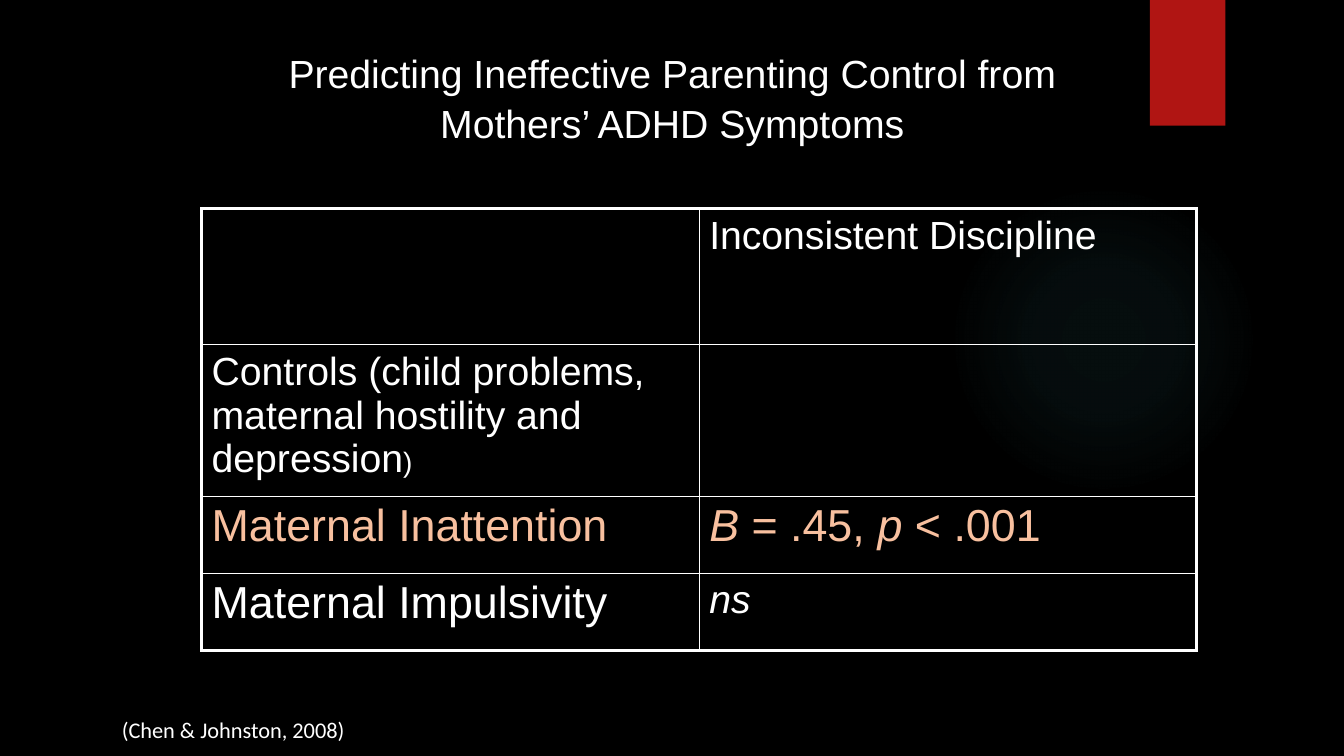
from lxml import etree
from pptx import Presentation
from pptx import util as u
from pptx.dml.color import RGBColor
from pptx.enum import shapes, text
from pptx.oxml.ns import nsdecls

WHITE, PEACH, RED, BLACK, TEAL = "FFFFFF", "F8C09F", "B01513", "000000", "50B9C1"


def color(hex_value):
    return RGBColor.from_string(hex_value)


def add_run(paragraph, words, **font_format):
    """Append a run; font_format holds font attributes and an optional hex fill."""
    run = paragraph.add_run()
    run.text = words
    run.font.color.rgb = color(font_format.pop("fill", WHITE))
    for name, value in font_format.items():
        setattr(run.font, name, value)


deck = Presentation()
deck.slide_width, deck.slide_height = u.Cm(33.87), u.Cm(19.05)
slide = deck.slides.add_slide(deck.slide_layouts[6])
slide.background.fill.solid()
slide.background.fill.fore_color.rgb = color(BLACK)

# Faint glow and red tab
glow = slide.shapes.add_shape(
    shapes.MSO_SHAPE.OVAL, u.Cm(23.9), u.Cm(4.65), u.Cm(7.82), u.Cm(7.82))
stops = "".join(
    f'<a:gs pos="{position * 1000}"><a:srgbClr val="{TEAL}">'
    f'<a:alpha val="{alpha * 1000}"/></a:srgbClr></a:gs>'
    for position, alpha in [(0, 7), (36, 6), (69, 0)])
glow_fill = etree.fromstring(
    f'<a:gradFill {nsdecls("a")} rotWithShape="1"><a:gsLst>{stops}</a:gsLst>'
    '<a:path path="circle"><a:fillToRect l="50000" t="50000" r="50000" b="50000"/>'
    '</a:path></a:gradFill>')
glow._element.spPr.insert(2, glow_fill)

tab = slide.shapes.add_shape(
    shapes.MSO_SHAPE.RECTANGLE, u.Cm(28.98), 0, u.Cm(1.9), u.Cm(3.17))
tab.fill.solid()
tab.fill.fore_color.rgb = color(RED)
for decoration in (glow, tab):
    decoration.shadow.inherit = False
    decoration.line.fill.background()

# Title
title = slide.shapes.add_textbox(u.Cm(5.08), u.Cm(1.07), u.Cm(23.72), u.Cm(2.64)).text_frame
title.word_wrap = True
title.auto_size = text.MSO_AUTO_SIZE.SHAPE_TO_FIT_TEXT
heading = title.paragraphs[0]
heading.alignment = text.PP_ALIGN.CENTER
heading.line_spacing = 1.05
add_run(heading, "Predicting Ineffective Parenting Control from Mothers’ ADHD Symptoms",
        size=u.Pt(28), name="Arial")

# Results table: each cell is a list of (words, size, colour, italic)
results = [
    [[], [("Inconsistent Discipline", 28, WHITE, False)]],
    [[("Controls (child problems, maternal hostility and depression", 28, WHITE, False),
      (")", 20, WHITE, False)], []],
    [[("Maternal Inattention", 32, PEACH, False)],
     [("B", 32, PEACH, True), (" = .45, ", 32, PEACH, False),
      ("p ", 32, PEACH, True), ("< .001", 32, PEACH, False)]],
    [[("Maternal Impulsivity", 32, WHITE, False)], [("ns", 28, WHITE, True)]],
]
row_heights = [3.43, 3.81, 1.94, 1.94]
column_width = 12.54
frame = slide.shapes.add_table(
    len(results), 2, u.Cm(5.08), u.Cm(5.26), u.Cm(2 * column_width), u.Cm(sum(row_heights)))
table = frame.table
for column in table.columns:
    column.width = u.Cm(column_width)

for r, (row, height) in enumerate(zip(results, row_heights)):
    table.rows[r].height = u.Cm(height)
    for c, runs in enumerate(row):
        cell = table.cell(r, c)
        cell.fill.background()
        paragraph = cell.text_frame.paragraphs[0]
        for words, size, fill, italic in runs:
            add_run(paragraph, words, size=u.Pt(size), name="Arial", fill=fill, italic=italic)
        outer_sides = {"lnL": c == 0, "lnR": c == 1,
                       "lnT": r == 0, "lnB": r == len(results) - 1}
        for place, (side, is_outer) in enumerate(outer_sides.items()):
            width = u.Pt(2.25 if is_outer else 1)
            border = etree.fromstring(
                f'<a:{side} {nsdecls("a")} w="{width}"><a:solidFill>'
                f'<a:srgbClr val="{WHITE}"/></a:solidFill></a:{side}>')
            cell._tc.get_or_add_tcPr().insert(place, border)

# Citation
citation = slide.shapes.add_textbox(u.Cm(2.82), u.Cm(17.93), u.Cm(6.2), u.Cm(0.94)).text_frame
citation.word_wrap = False
citation.auto_size = text.MSO_AUTO_SIZE.SHAPE_TO_FIT_TEXT
add_run(citation.paragraphs[0], "(Chen & Johnston, 2008)", size=u.Pt(16), name="Calibri")

deck.save("out.pptx")
